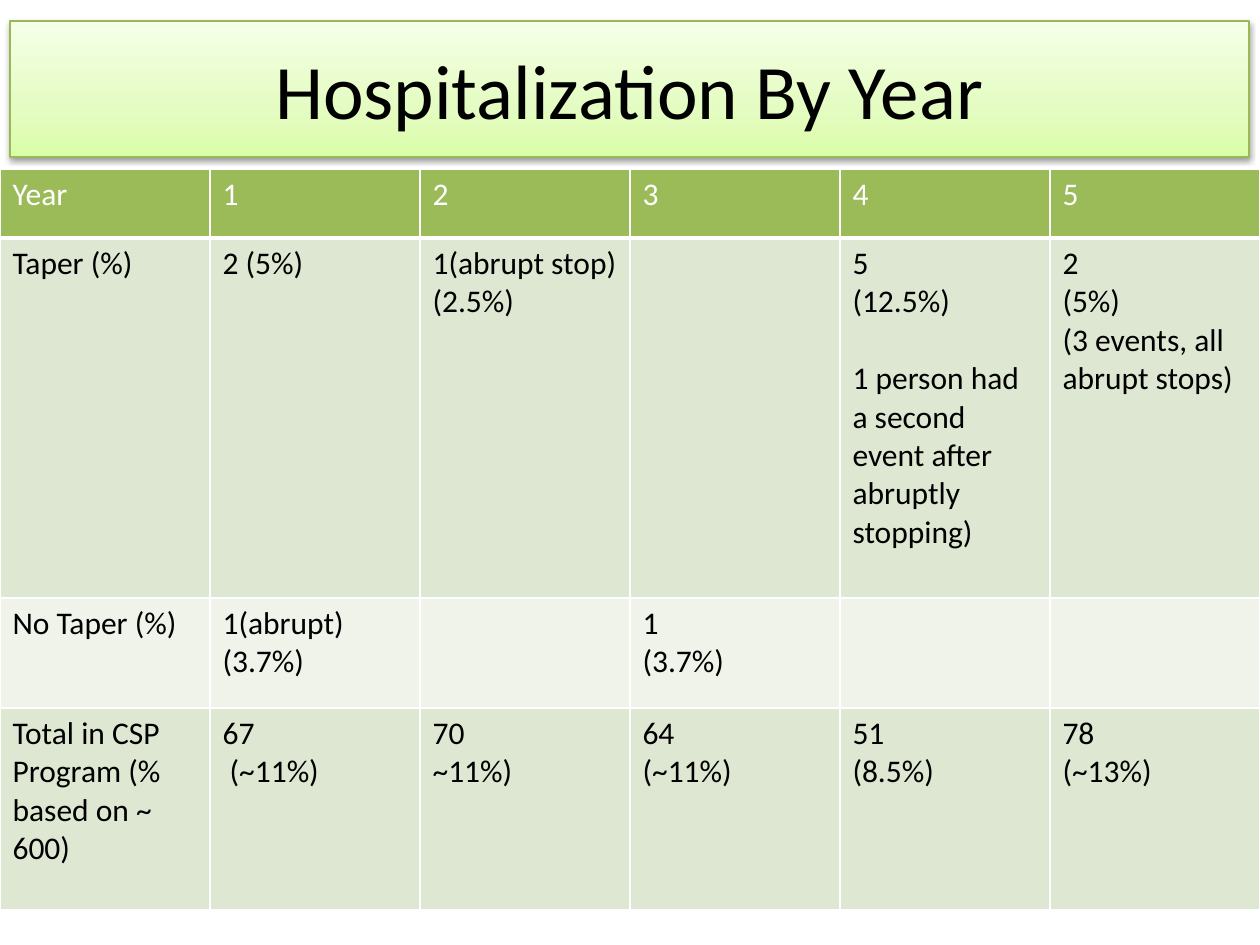
from lxml import etree
from pptx import Presentation
from pptx import util as u
from pptx.dml.color import RGBColor
from pptx.enum import text
from pptx.oxml import ns

SCALE = 914400 / 126
FONT = "Calibri"
HEADER, BAND, LIGHT = "9BBB59", "DEE7D1", "EFF3EA"
ROW_HEIGHTS = [69, 360, 110, 202]
ROW_FILLS = [HEADER, BAND, LIGHT, BAND]
COLUMN_WIDTH = 210
BLANK_LINE = 22
ROWS = [
    ["Year", "1", "2", "3", "4", "5"],
    ["Taper (%)", "2 (5%)", "1(abrupt stop)\n(2.5%)", "",
     "5\n(12.5%)\n1 person had a second event after abruptly stopping)",
     "2\n(5%)\n(3 events, all abrupt stops)"],
    ["No Taper (%)", "1(abrupt)\n(3.7%)", "", "1\n(3.7%)", "", ""],
    ["Total in CSP\nProgram (% based on ~ 600)", "67\n (~11%)", "70\n~11%)",
     "64\n(~11%)", "51\n(8.5%)", "78\n(~13%)"],
]


def px(length):
    return u.Emu(round(length * SCALE))


def color(value):
    return RGBColor.from_string(value)


def add_xml(parent, tag, **attributes):
    element = etree.SubElement(parent, ns.qn(tag))
    for name, value in attributes.items():
        element.set(name, str(value))
    return element


def write_text(frame, content, size=18, fill="000000", align=text.PP_ALIGN.LEFT):
    frame.text = content
    for paragraph in frame.paragraphs:
        paragraph.alignment = align
        font = paragraph.font
        for item in [font, *(run.font for run in paragraph.runs)]:
            item.name, item.size, item.bold = FONT, u.Pt(size), False
            item.color.rgb = color(fill)


def add_gradient(shape, stops, angle):
    gradient = add_xml(shape.element.spPr, "a:gradFill", rotWithShape=1)
    stop_list = add_xml(gradient, "a:gsLst")
    for position, value in stops:
        stop = add_xml(stop_list, "a:gs", pos=position * 1000)
        add_xml(stop, "a:srgbClr", val=value)
    add_xml(gradient, "a:lin", ang=angle * 60000, scaled=1)


def add_shadow(shape):
    effects = add_xml(shape.element.spPr, "a:effectLst")
    shadow = add_xml(effects, "a:outerShdw", blurRad=40000, dist=20000,
                     dir=5400000, rotWithShape=0)
    shade = add_xml(shadow, "a:srgbClr", val="000000")
    add_xml(shade, "a:alpha", val=38000)


def format_title(title):
    title.left, title.top, title.width, title.height = map(px, (10, 21, 1239, 136))
    add_gradient(title, [(0, "DAFDA7"), (35, "E4FCC2"), (100, "F5FFE7")], 270)
    title.line.color.rgb = color("98B955")
    title.line.width = u.Pt(0.75)
    add_shadow(title)
    write_text(title.text_frame, "Hospitalization By Year", size=44,
               align=text.PP_ALIGN.CENTER)
    title.text_frame.vertical_anchor = text.MSO_ANCHOR.MIDDLE


def add_borders(cell, bottom):
    properties = cell._tc.get_or_add_tcPr()
    for side, width in zip("LRTB", (1, 1, 1, bottom)):
        line = add_xml(properties, f"a:ln{side}", w=u.Pt(width))
        add_xml(add_xml(line, "a:solidFill"), "a:srgbClr", val="FFFFFF")


def add_year_table(slide):
    columns = len(ROWS[0])
    table = slide.shapes.add_table(
        len(ROWS), columns, px(0), px(169),
        px(columns * COLUMN_WIDTH), px(sum(ROW_HEIGHTS))).table
    for column in table.columns:
        column.width = px(COLUMN_WIDTH)
    for index, (row, height) in enumerate(zip(table.rows, ROW_HEIGHTS)):
        row.height = px(height)
        is_header = index == 0
        for cell, content in zip(row.cells, ROWS[index]):
            add_borders(cell, 3 if is_header else 1)
            cell.fill.solid()
            cell.fill.fore_color.rgb = color(ROW_FILLS[index])
            write_text(cell.text_frame, content,
                       fill="FFFFFF" if is_header else "000000")
    second_event = table.cell(1, 4).text_frame.paragraphs[-1]
    second_event.space_before = u.Pt(BLANK_LINE)


def main():
    presentation = Presentation()
    presentation.slide_width, presentation.slide_height = px(1260), px(945)
    slide = presentation.slides.add_slide(presentation.slide_layouts[5])
    format_title(slide.shapes.title)
    add_year_table(slide)
    presentation.save("out.pptx")


if __name__ == "__main__":
    main()
